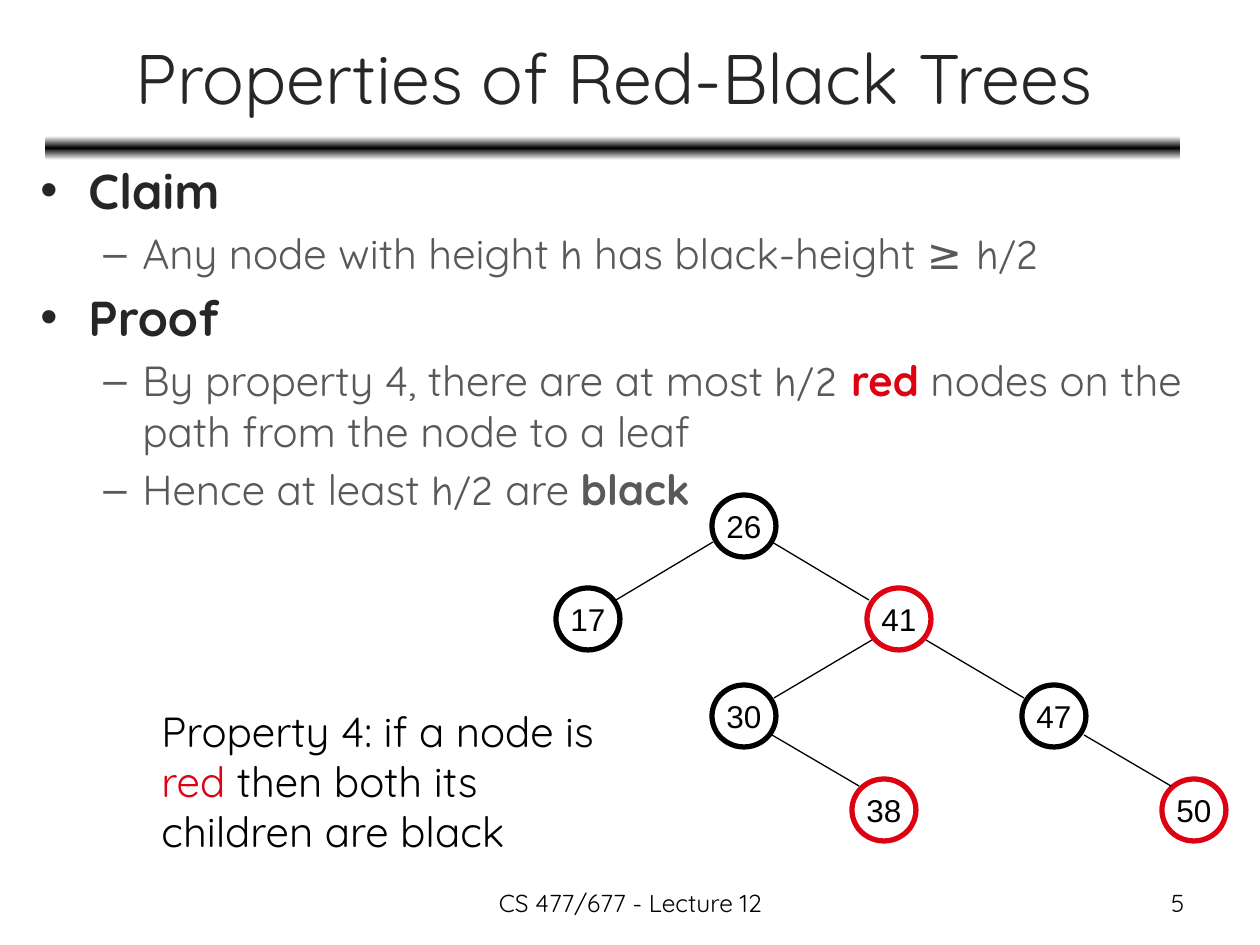
from copy import deepcopy
from typing import NamedTuple

from lxml.etree import SubElement
from pptx import Presentation
from pptx.dml.color import RGBColor
from pptx.enum.shapes import MSO_CONNECTOR, MSO_SHAPE
from pptx.enum.text import MSO_ANCHOR, PP_ALIGN
from pptx.oxml.ns import qn
from pptx.util import Emu, Pt

SCALE = 914400 / 126
BLACK, RED, WHITE = "000000", "DD0111", "FFFFFF"
DARK, GREY = "262626", "595959"
SANS, COMIC = "Quicksand", "Comic Neue"
NODE_W, NODE_H = 64, 62


class Run(NamedTuple):
    text: str
    size: int = 24
    color: str = GREY
    name: str = SANS
    bold: bool = False


class Para(NamedTuple):
    runs: list[Run]
    align: PP_ALIGN = PP_ALIGN.LEFT
    bullet: str = ""
    margin: int = 0
    indent: int = 0
    before: float = 0


class Box(NamedTuple):
    x: int
    y: int
    w: int
    h: int
    paras: list[Para]
    anchor: MSO_ANCHOR = MSO_ANCHOR.TOP


class Node(NamedTuple):
    key: str
    x: int
    y: int
    color: str


class Edge(NamedTuple):
    x1: int
    y1: int
    x2: int
    y2: int


def px(n: int) -> Emu:
    return Emu(round(n * SCALE))


def rgb(color: str) -> RGBColor:
    return RGBColor.from_string(color)


def write(tf, paras: list[Para]) -> None:
    for i, para in enumerate(paras):
        p = tf.paragraphs[0] if i == 0 else tf.add_paragraph()
        p.alignment = para.align
        p.space_before = Pt(para.before)
        pPr = p._p.get_or_add_pPr()
        pPr.set("marL", str(px(para.margin)))
        pPr.set("indent", str(px(para.indent)))
        if para.bullet:
            SubElement(pPr, qn("a:buFont"), typeface="Arial")
            SubElement(pPr, qn("a:buChar"), char=para.bullet)
        for run in para.runs:
            r = p.add_run()
            r.text = run.text
            for attr, value in {"size": Pt(run.size), "name": run.name, "bold": run.bold}.items():
                setattr(r.font, attr, value)
            r.font.color.rgb = rgb(run.color)


def add_box(s, box: Box) -> None:
    tf = s.shapes.add_textbox(*map(px, box[:4])).text_frame
    tf.word_wrap = True
    tf.vertical_anchor = box.anchor
    write(tf, box.paras)


def add_bar(s) -> None:
    """Rule under the title, fading from black to white above and below."""
    sp = s.shapes.add_shape(MSO_SHAPE.ROUNDED_RECTANGLE, px(45), px(136), px(1135), px(24))
    sp.shadow.inherit = False
    sp.line.fill.background()
    sp.fill.gradient()
    sp.fill.gradient_angle = 90
    first, middle = sp.fill.gradient_stops
    first.color.rgb, first.position = rgb(WHITE), 0
    middle.color.rgb, middle.position = rgb(BLACK), 0.5
    stops = sp._element.spPr.find(qn("a:gradFill")).find(qn("a:gsLst"))
    last = deepcopy(stops[0])
    last.set("pos", "100000")
    stops.append(last)


def add_node(s, node: Node) -> None:
    sp = s.shapes.add_shape(MSO_SHAPE.OVAL, px(node.x), px(node.y), px(NODE_W), px(NODE_H))
    sp.shadow.inherit = False
    sp.fill.background()
    sp.line.color.rgb = rgb(node.color)
    sp.line.width = Pt(3)
    tf = sp.text_frame
    tf.word_wrap = False
    tf.vertical_anchor = MSO_ANCHOR.MIDDLE
    write(tf, [Para([Run(node.key, 18, BLACK, "Arial")], PP_ALIGN.CENTER)])


def add_edge(s, edge: Edge) -> None:
    cx = s.shapes.add_connector(MSO_CONNECTOR.STRAIGHT, *map(px, edge))
    cx.line.color.rgb = rgb(BLACK)
    cx.line.width = Pt(0.75)
    SubElement(cx._element.spPr, qn("a:effectLst"))


def heading(text: str) -> Para:
    return Para([Run(text, 28, DARK, bold=True)], bullet="•", margin=48, indent=-48, before=5.6)


def point(*runs: Run) -> Para:
    return Para(list(runs), bullet="–", margin=102, indent=-39, before=4.8)


BOXES = [
    Box(47, 14, 1134, 125,
        [Para([Run("Properties of Red-Black Trees", 40, DARK)], PP_ALIGN.CENTER)],
        MSO_ANCHOR.MIDDLE),
    Box(28, 154, 1198, 417, [
        heading("Claim"),
        point(Run("Any node with height "), Run("h", name=COMIC),
              Run(" has black-height "), Run("≥ h/2", name=COMIC)),
        heading("Proof"),
        point(Run("By property 4, there are at most "), Run("h/2 ", name=COMIC),
              Run("red", color=RED, bold=True),
              Run(" nodes on the path from the node to a leaf")),
        point(Run("Hence at least "), Run("h/2", name=COMIC),
              Run(" are "), Run("black", bold=True)),
    ]),
    Box(86, 699, 534, 165, [
        Para([Run("Property 4: if a node is ", color=BLACK), Run("red", color=RED),
              Run(" then both its children are black", color=BLACK)],
             margin=63, before=4.8),
    ]),
    Box(903, 882, 294, 44, [Para([Run("5", 14, BLACK)], PP_ALIGN.RIGHT)]),
    Box(431, 882, 399, 44, [Para([Run("CS 477/677 - Lecture 12", 14, BLACK)], PP_ALIGN.CENTER)]),
]

NODES = [
    Node("26", 712, 495, BLACK),
    Node("17", 556, 588, BLACK),
    Node("41", 867, 588, RED),
    Node("30", 712, 685, BLACK),
    Node("47", 1022, 685, BLACK),
    Node("38", 852, 779, RED),
    Node("50", 1162, 779, RED),
]

EDGES = [
    Edge(713, 542, 616, 600),
    Edge(772, 542, 869, 600),
    Edge(872, 640, 774, 698),
    Edge(926, 640, 1024, 698),
    Edge(772, 735, 859, 786),
    Edge(1084, 735, 1171, 786),
]


def main() -> None:
    prs = Presentation()
    prs.slide_width, prs.slide_height = px(1260), px(945)
    s = prs.slides.add_slide(prs.slide_layouts[6])
    add_bar(s)
    for box in BOXES:
        add_box(s, box)
    for node in NODES:
        add_node(s, node)
    for edge in EDGES:
        add_edge(s, edge)
    prs.save("out.pptx")


if __name__ == "__main__":
    main()
